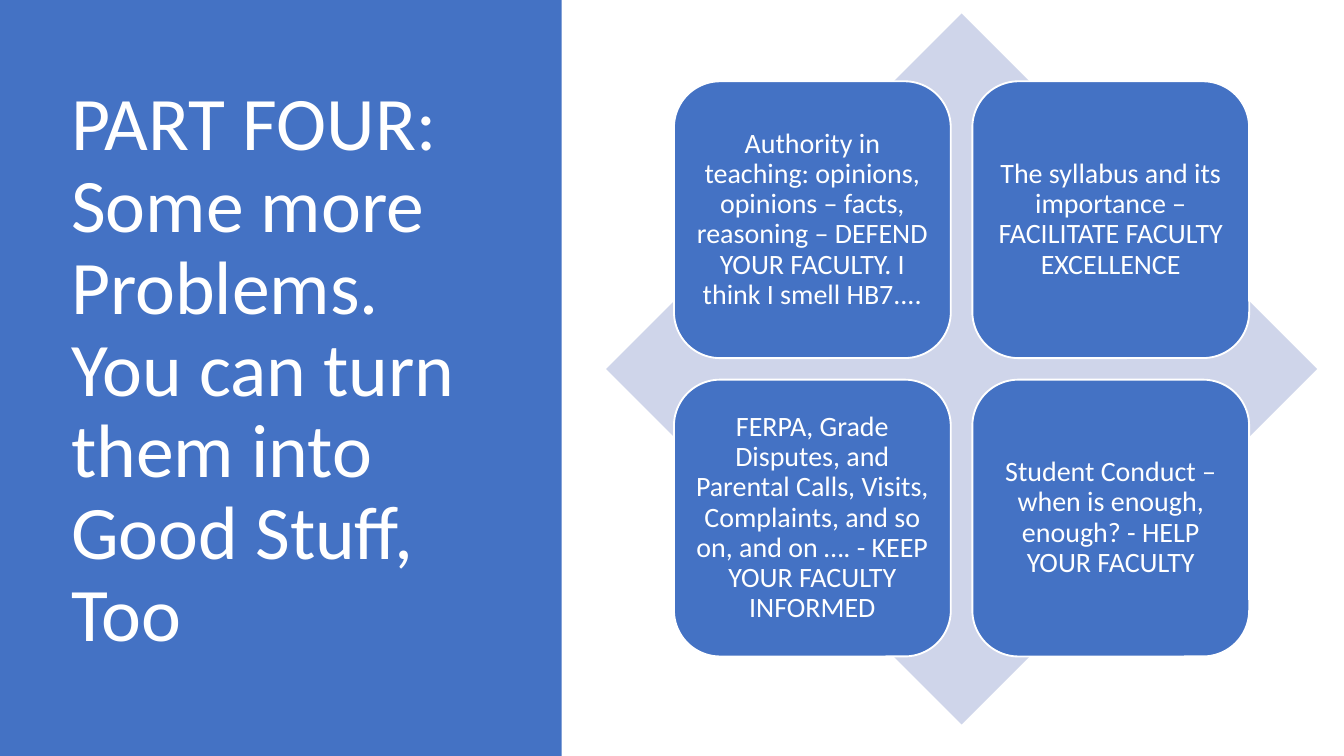
import pptx
import pptx.dml.color
import pptx.enum.shapes
import pptx.enum.text
import pptx.util

# Content
TITLE = "PART FOUR: Some more Problems. You can turn them into Good Stuff, Too"
TOPICS = [
    ["Authority in teaching: opinions, opinions – facts, reasoning – DEFEND YOUR FACULTY. "
     "I think I smell HB7....",
     "The syllabus and its importance – FACILITATE FACULTY EXCELLENCE"],
    ["FERPA, Grade Disputes, and Parental Calls, Visits, Complaints, and so on, and on …. "
     "- KEEP YOUR FACULTY INFORMED",
     "Student Conduct – when is enough, enough? - HELP YOUR FACULTY"],
]

# Style and layout, in inches
BLUE, PALE, WHITE = "4472C4", "CFD5EA", "FFFFFF"
FONT = "Calibri"
WIDTH = 10
HEIGHT = WIDTH * 9 / 16
PANEL_WIDTH = 4.18
DIAMOND_LEFT, DIAMOND_TOP, DIAMOND_SIZE = 4.51, 0.1, 5.29
TILE, GAP = 2.06, 0.16
INSET = 0.06

SHAPES = pptx.enum.shapes.MSO_SHAPE
ALIGN = pptx.enum.text.PP_ALIGN


def color(value):
    return pptx.dml.color.RGBColor.from_string(value)


def place(shape, *box):
    shape.left, shape.top, shape.width, shape.height = map(pptx.util.Inches, box)


def add_shape(slide, kind, box, fill, line=None):
    shape = slide.shapes.add_shape(kind, *map(pptx.util.Inches, box))
    shape.shadow.inherit = False
    shape.fill.solid()
    shape.fill.fore_color.rgb = color(fill)
    if line:
        shape.line.color.rgb = color(line)
        shape.line.width = pptx.util.Pt(1)
    else:
        shape.line.fill.background()
    return shape


def write(shape, text, size, alignment):
    frame = shape.text_frame
    frame.text = text
    frame.word_wrap = True
    frame.auto_size = pptx.enum.text.MSO_AUTO_SIZE.NONE
    frame.vertical_anchor = pptx.enum.text.MSO_ANCHOR.MIDDLE
    paragraph = frame.paragraphs[0]
    paragraph.alignment = alignment
    paragraph.line_spacing = 0.9
    paragraph.font.name = FONT
    paragraph.font.size = pptx.util.Pt(size)
    paragraph.font.color.rgb = color(WHITE)
    return frame


presentation = pptx.Presentation()
presentation.slide_width = pptx.util.Inches(WIDTH)
presentation.slide_height = pptx.util.Inches(HEIGHT)
slide = presentation.slides.add_slide(presentation.slide_layouts[5])

# Title on a blue side panel
panel = add_shape(slide, SHAPES.RECTANGLE, (0, 0, PANEL_WIDTH, HEIGHT), BLUE)
title = slide.shapes.title
panel._element.addnext(title._element)
place(title, 0.43, 0.51, 3.12, 4.51)
write(title, TITLE, 40.5, ALIGN.LEFT)

# Diamond behind the topics
add_shape(slide, SHAPES.DIAMOND,
          (DIAMOND_LEFT, DIAMOND_TOP, DIAMOND_SIZE, DIAMOND_SIZE), PALE)

# Topic tiles, centred on the diamond
margin = (DIAMOND_SIZE - 2 * TILE - GAP) / 2
for row, topics in enumerate(TOPICS):
    for column, topic in enumerate(topics):
        left = DIAMOND_LEFT + margin + column * (TILE + GAP)
        top = DIAMOND_TOP + margin + row * (TILE + GAP)
        tile = add_shape(slide, SHAPES.ROUNDED_RECTANGLE, (left, top, TILE, TILE), BLUE, WHITE)
        frame = write(tile, topic, 15, ALIGN.CENTER)
        frame.margin_left = frame.margin_right = pptx.util.Inches(INSET)
        frame.margin_top = frame.margin_bottom = pptx.util.Inches(INSET)

presentation.save("out.pptx")
